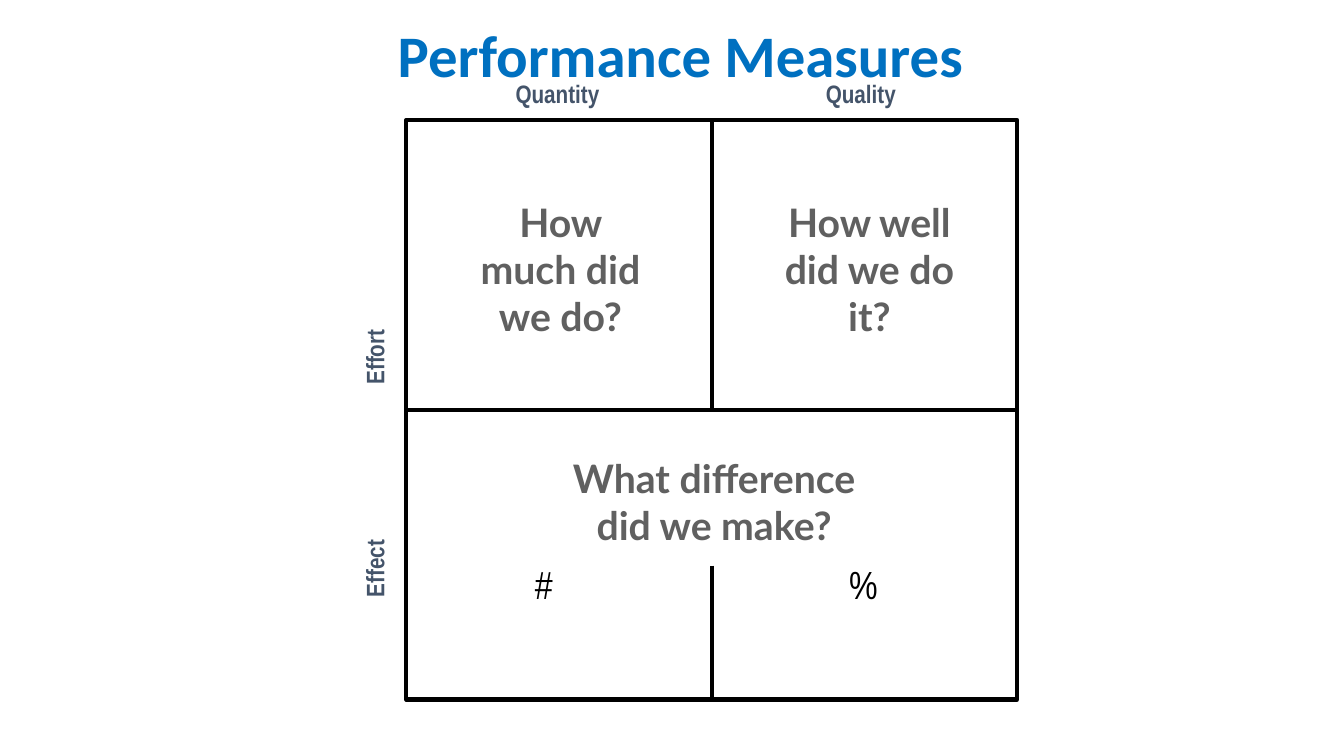
"""Build the Performance Measures quadrant slide."""
from pptx import Presentation, util as u
from pptx.dml import color
from pptx.enum import shapes, text
from pptx.oxml import ns
from lxml import etree


def rgb(value):
    """Turn a hex string into a colour."""
    return color.RGBColor.from_string(value)


class Board:
    """Hold the style and the current slide, and draw its elements."""

    BLACK, BLUE, SLATE, GREY = "000000", "0070C0", "44546A", "606060"
    QUESTION = ("Lato", 28, GREY, True)
    LABEL = ("Arial Narrow", 18, SLATE, True)
    SYMBOL = ("Arial Narrow", 28, BLACK, False)
    HEADING = ("Calibri", 42, BLUE, True)
    LINE_WIDTH = u.Pt(3)

    def __init__(self, slide):
        """Keep the slide to draw on."""
        self.slide = slide

    def fill_text(self, shape, lines, style):
        """Fill a shape with one centred paragraph of styled lines."""
        name, size, hue, bold = style
        frame = shape.text_frame
        frame.word_wrap = True
        frame.auto_size = text.MSO_AUTO_SIZE.NONE
        frame.margin_left = frame.margin_right = u.Pt(7.2)
        frame.margin_top = frame.margin_bottom = u.Pt(3.6)
        paragraph = frame.paragraphs[0]
        paragraph.alignment = text.PP_ALIGN.CENTER
        for index, line in enumerate(lines):
            if index:
                paragraph.add_line_break()
            run = paragraph.add_run()
            run.text = line
            run.font.name = name
            run.font.size = u.Pt(size)
            run.font.bold = bold
            run.font.color.rgb = rgb(hue)

    def title(self, heading, left, top, width, height):
        """Place and format the title placeholder."""
        shape = self.slide.shapes.title
        shape.left, shape.top = u.Pt(left), u.Pt(top)
        shape.width, shape.height = u.Pt(width), u.Pt(height)
        self.fill_text(shape, [heading], self.HEADING)
        shape.text_frame.vertical_anchor = text.MSO_ANCHOR.MIDDLE

    def label(self, lines, style, left, top, width, height, rotation=0):
        """Add a text box."""
        shape = self.slide.shapes.add_textbox(
            u.Pt(left), u.Pt(top), u.Pt(width), u.Pt(height))
        shape.rotation = rotation
        self.fill_text(shape, lines, style)

    def outline(self, left, top, width, height):
        """Add an unfilled rectangle."""
        shape = self.slide.shapes.add_shape(
            shapes.MSO_SHAPE.RECTANGLE,
            u.Pt(left), u.Pt(top), u.Pt(width), u.Pt(height))
        shape.shadow.inherit = False
        shape.fill.background()
        shape.line.color.rgb = rgb(self.BLACK)
        shape.line.width = self.LINE_WIDTH

    def divider(self, x1, y1, x2, y2):
        """Add a straight line."""
        connector = self.slide.shapes.add_connector(
            shapes.MSO_CONNECTOR.STRAIGHT,
            u.Pt(x1), u.Pt(y1), u.Pt(x2), u.Pt(y2))
        connector.line.color.rgb = rgb(self.BLACK)
        connector.line.width = self.LINE_WIDTH
        etree.SubElement(connector._element.spPr, ns.qn("a:effectLst"))


def main():
    """Create the presentation and save it."""
    presentation = Presentation()
    presentation.slide_width = u.Pt(960)
    presentation.slide_height = u.Pt(540)
    board = Board(presentation.slides.add_slide(presentation.slide_layouts[5]))

    left, top, width, height = 290.2, 85.7, 436.3, 414
    right, bottom = left + width, top + height
    center, middle = left + width / 2, top + height / 2

    board.title("Performance Measures", 162, 10.8, 648, 55.4)
    board.outline(left, top, width, height)
    board.divider(left, middle, right, middle)
    board.divider(center, top, center, middle)
    board.divider(center, 404, center, bottom)

    board.label(["How much did we do?"], board.QUESTION, 327.6, 138.2, 145.4, 109)
    board.label(["How well", "did we do it?"], board.QUESTION, 540, 138.2, 162, 109)
    board.label(["What difference did we make?"], board.QUESTION, 383, 321.1, 254.2, 74)

    for name, x in (("Quantity", 319), ("Quality", 535.7)):
        board.label([name], board.LABEL, x, 52.2, 158.4, 36)
    for name, y in (("Effort", 255), ("Effect", 406)):
        board.label([name], board.LABEL, 217, y - 14, 100, 28, rotation=270)
    for symbol, x in (("#", 349.2), ("%", 577.4)):
        board.label([symbol], board.SYMBOL, x, 396.4, 78.5, 41)

    presentation.save("out.pptx")


if __name__ == "__main__":
    main()
